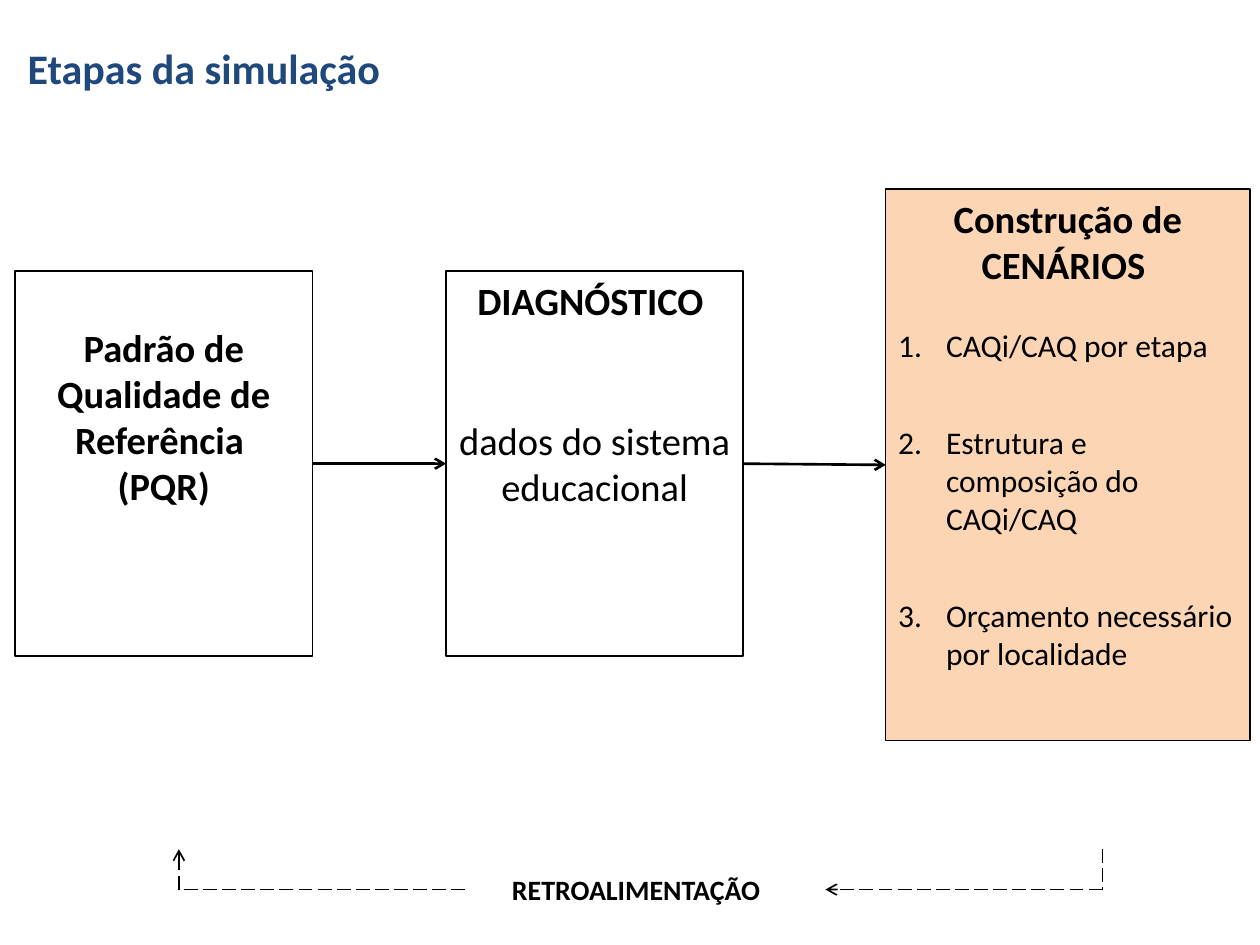
import pptx
import pptx.dml.color
import pptx.enum.dml
import pptx.enum.shapes
import pptx.enum.text
import pptx.oxml.ns
import pptx.util
from lxml import etree

FONT = "Calibri"
BLACK = "000000"
COLUMNS, ROWS = 100, 75
LEFT = pptx.enum.text.PP_ALIGN.LEFT
CENTER = pptx.enum.text.PP_ALIGN.CENTER
TOP = pptx.enum.text.MSO_ANCHOR.TOP
MIDDLE = pptx.enum.text.MSO_ANCHOR.MIDDLE

prs = pptx.Presentation()
prs.slide_width = pptx.util.Inches(10)
prs.slide_height = pptx.util.Inches(7.5)


def col(n):
    return round(prs.slide_width * n / COLUMNS)


def row(n):
    return round(prs.slide_height * n / ROWS)


def grid_box(left, top, width, height):
    return col(left), row(top), col(width), row(height)


def color(hex_code):
    return pptx.dml.color.RGBColor.from_string(hex_code)


def add_xml(parent, tag, **attributes):
    return etree.SubElement(parent, pptx.oxml.ns.qn(tag), attributes)


def prepare_frame(frame, anchor):
    frame.word_wrap = True
    frame.auto_size = pptx.enum.text.MSO_AUTO_SIZE.NONE
    frame.vertical_anchor = anchor


def write(paragraph, text, size, bold=False, align=CENTER, ink=BLACK, before=0, after=0):
    paragraph.alignment = align
    paragraph.space_before = pptx.util.Pt(before)
    paragraph.space_after = pptx.util.Pt(after)
    run = paragraph.add_run()
    run.text = text
    run.font.name = FONT
    run.font.size = pptx.util.Pt(size)
    run.font.bold = bold
    run.font.color.rgb = color(ink)


def number(paragraph):
    properties = paragraph._p.get_or_add_pPr()
    indent = pptx.util.Inches(0.38)
    properties.set("marL", str(indent))
    properties.set("indent", str(-indent))
    add_xml(properties, "a:buFont", typeface="+mj-lt")
    add_xml(properties, "a:buAutoNum", type="arabicPeriod")


def add_line(shapes, start, end, width, dashed=False, arrow=True):
    line = shapes.add_connector(pptx.enum.shapes.MSO_CONNECTOR.STRAIGHT, *start, *end)
    line.line.color.rgb = color(BLACK)
    line.line.width = pptx.util.Pt(width)
    if dashed:
        line.line.dash_style = pptx.enum.dml.MSO_LINE.LONG_DASH
    if arrow:
        add_xml(line.line._get_or_add_ln(), "a:tailEnd", type="arrow")
    add_xml(line._element.spPr, "a:effectLst")
    return line


def add_title(slide, box):
    title = slide.shapes.title
    title.left, title.top, title.width, title.height = box
    prepare_frame(title.text_frame, TOP)
    write(title.text_frame.paragraphs[0], "Etapas da simulação", 24, True, LEFT, "1F497D")


def add_step(slide, box, fill=None, border=1):
    step = slide.shapes.add_shape(pptx.enum.shapes.MSO_SHAPE.RECTANGLE, *box)
    step.shadow.inherit = False
    if fill:
        step.fill.solid()
        step.fill.fore_color.rgb = color(fill)
    else:
        step.fill.background()
    step.line.color.rgb = color(BLACK)
    step.line.width = pptx.util.Pt(border)
    prepare_frame(step.text_frame, TOP)
    return step


def add_standard(slide, box):
    step = add_step(slide, box)
    frame = step.text_frame
    frame.margin_top = pptx.util.Inches(0.42)
    write(frame.paragraphs[0], "Padrão de Qualidade de Referência ", 22, True)
    write(frame.add_paragraph(), "(PQR)", 22, True)
    return step


def add_diagnosis(slide, box):
    step = add_step(slide, box)
    frame = step.text_frame
    write(frame.paragraphs[0], "DIAGNÓSTICO ", 22, True)
    write(frame.add_paragraph(), "dados do sistema educacional", 22, before=53.7)
    return step


def add_scenarios(slide, box):
    step = add_step(slide, box, "FCD5B5", 0.75)
    frame = step.text_frame
    write(frame.paragraphs[0], "Construção de CENÁRIOS ", 22, True)
    items = ("CAQi/CAQ por etapa",
             "Estrutura e composição do CAQi/CAQ",
             "Orçamento necessário por localidade")
    for index, item in enumerate(items):
        paragraph = frame.add_paragraph()
        write(paragraph, item, 18, align=LEFT, before=28 if index else 22, after=6)
        number(paragraph)
    return step


def link_steps(slide, steps):
    right_side, left_side = 3, 1
    for source, target in zip(steps, steps[1:]):
        arrow = add_line(slide.shapes, (0, 0), (0, 0), 1.5)
        arrow.begin_connect(source, right_side)
        arrow.end_connect(target, left_side)


def add_feedback(slide, box):
    left, top, width, height = box
    right, bottom = left + width, top + height
    loop = slide.shapes.add_group_shape().shapes
    # Path from the scenarios to the label, then from the label to the standard
    for corner, start, end in (
        ((right, bottom), (right, top), (left + round(width * 0.7), bottom)),
        ((left, bottom), (left + round(width * 0.31), bottom), (left, top)),
    ):
        add_line(loop, start, corner, 1, dashed=True, arrow=False)
        add_line(loop, corner, end, 1, dashed=True)
    # Label centred on the lower line
    label_height = round(height * 1.16)
    label = slide.shapes.add_textbox(left + round(width * 0.34), bottom - label_height // 2,
                                     round(width * 0.31), label_height)
    prepare_frame(label.text_frame, MIDDLE)
    write(label.text_frame.paragraphs[0], "RETROALIMENTAÇÃO", 16, True)


def build_slide():
    slide = prs.slides.add_slide(prs.slide_layouts[5])
    add_title(slide, grid_box(1.2, 2.9, 89.4, 5))
    add_feedback(slide, grid_box(14.2, 67.4, 73.3, 3.2))
    link_steps(slide, [
        add_standard(slide, grid_box(1.2, 21.5, 23.6, 30.6)),
        add_diagnosis(slide, grid_box(35.4, 21.5, 23.6, 30.6)),
        add_scenarios(slide, grid_box(70.3, 15, 28.9, 43.8)),
    ])


if __name__ == "__main__":
    build_slide()
    prs.save("out.pptx")
